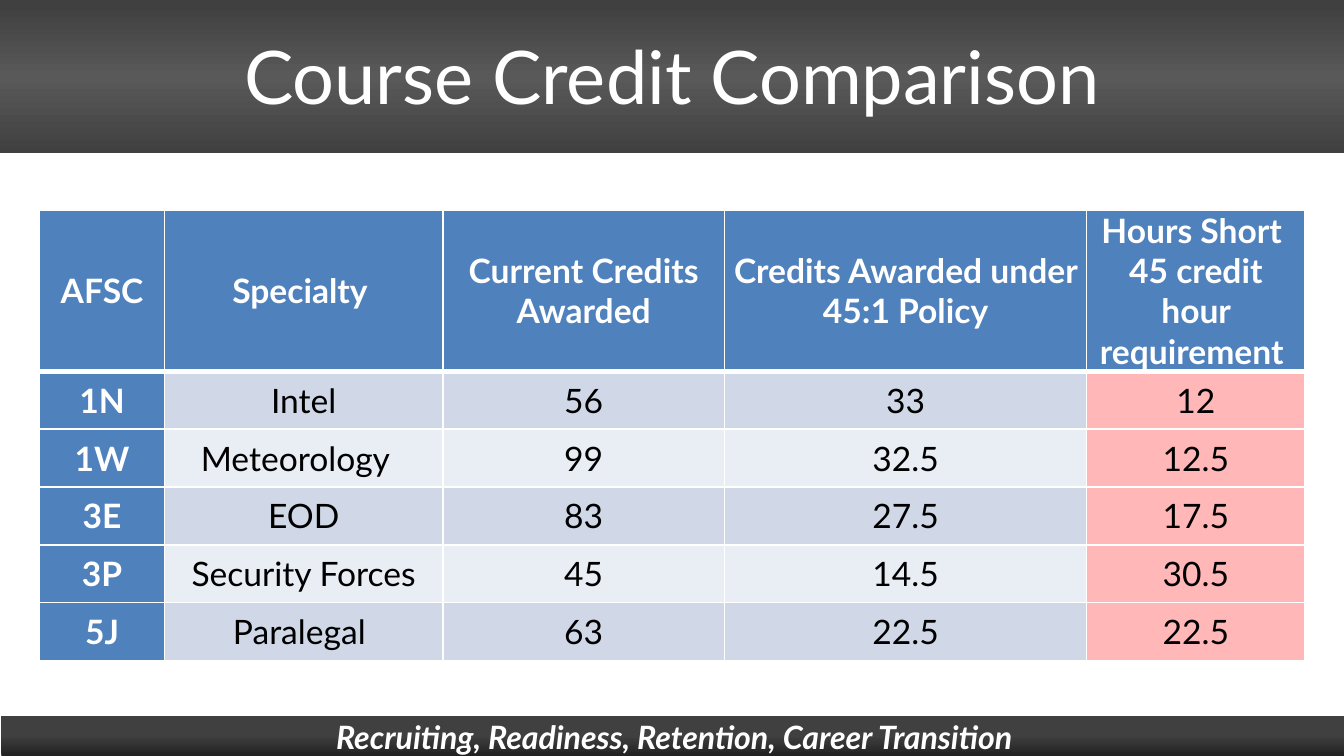
from copy import deepcopy
from pptx import Presentation
from pptx.dml.color import RGBColor
from pptx.enum.shapes import MSO_SHAPE as Shape
from pptx.enum.text import MSO_ANCHOR as Anchor, PP_ALIGN as Align
from pptx.oxml import parse_xml
from pptx.oxml.ns import nsdecls, qn
from pptx.util import Pt

COLORS = {
    "white": "FFFFFF",
    "black": "000000",
    "blue": "4F81BD",
    "band_dark": "D0D8E8",
    "band_light": "E9EDF4",
    "shortfall": "FFB7B7",
}


def add_bar(page, left, top, width, height, stops):
    bar = page.shapes.add_shape(Shape.RECTANGLE, Pt(left), Pt(top), Pt(width), Pt(height))
    bar.shadow.inherit = False
    bar.line.fill.background()
    bar.fill.gradient()
    bar.fill.gradient_angle = 90
    stop_list = bar._element.spPr.find(qn("a:gradFill")).find(qn("a:gsLst"))
    stop_list.append(deepcopy(stop_list[0]))
    for stop, (position, color) in zip(bar.fill.gradient_stops, stops):
        stop.position = position
        stop.color.rgb = RGBColor.from_string(color)
    return bar


def write_text(frame, text, size, color, bold=False, italic=False):
    para = frame.paragraphs[0]
    para.text = text
    para.alignment = Align.CENTER
    para.font.name = "Lato"
    para.font.size = Pt(size)
    para.font.bold = bold
    para.font.italic = italic
    para.font.color.rgb = RGBColor.from_string(COLORS[color])


deck = Presentation()
deck.slide_width, deck.slide_height = Pt(720), Pt(405)
page = deck.slides.add_slide(deck.slide_layouts[6])

add_bar(page, 0, 0, 720, 82, [(0, "404040"), (0.5, "595959"), (0.97, "404040")])
footer = add_bar(page, 0.7, 383.6, 720.7, 21.6,
                 [(0, "212121"), (0.52, "404040"), (0.92, "3D3D3D")])
frame = footer.text_frame
frame.word_wrap = True
frame.vertical_anchor = Anchor.MIDDLE
frame.margin_left = frame.margin_right = Pt(5)
frame.margin_top = frame.margin_bottom = Pt(3)
write_text(frame, "Recruiting, Readiness, Retention, Career Transition", 17.2, "white", True, True)

rows = [
    ["AFSC", "Specialty ", "Current Credits Awarded", "Credits Awarded under 45:1 Policy",
     "Hours Short \n45 credit hour requirement "],
    ["1N", "Intel", "56", "33", "12"],
    ["1W", "Meteorology  ", "99", "32.5", "12.5"],
    ["3E", "EOD", "83", "27.5", "17.5"],
    ["3P", "Security Forces", "45", "14.5", "30.5"],
    ["5J", "Paralegal ", "63", "22.5", "22.5"],
]
widths = [67, 149, 151, 194, 117]
heights = [62] + [31] * 5
table = page.shapes.add_table(len(rows), len(widths), Pt(21.2), Pt(112.5),
                              Pt(sum(widths)), Pt(sum(heights))).table
table.horz_banding = False
table.first_row = False
for column, width in zip(table.columns, widths):
    column.width = Pt(width)
for row, height in zip(table.rows, heights):
    row.height = Pt(height)

for i, values in enumerate(rows):
    for j, value in enumerate(values):
        cell = table.cell(i, j)
        cell.vertical_anchor = Anchor.MIDDLE
        cell.margin_left = cell.margin_right = Pt(5)
        cell.margin_top = cell.margin_bottom = 0
        for side in "LRTB":
            thick = (i, side) in [(0, "B"), (1, "T")]
            cell._tc.get_or_add_tcPr().append(parse_xml(
                f'<a:ln{side} {nsdecls("a")} w="{Pt(3 if thick else 1)}"><a:solidFill>'
                f'<a:srgbClr val="{COLORS["white"]}"/></a:solidFill></a:ln{side}>'))
        heading = i == 0 or j == 0
        if heading:
            fill = "blue"
        elif j == len(values) - 1:
            fill = "shortfall"
        else:
            fill = "band_dark" if i % 2 else "band_light"
        cell.fill.solid()
        cell.fill.fore_color.rgb = RGBColor.from_string(COLORS[fill])
        write_text(cell.text_frame, value, 18, "white" if heading else "black", heading)

title = page.shapes.add_textbox(Pt(120), Pt(12.5), Pt(480), Pt(55.5))
frame = title.text_frame
frame.word_wrap = True
frame.vertical_anchor = Anchor.MIDDLE
frame.margin_left = frame.margin_right = Pt(5)
write_text(frame, "Course Credit Comparison", 39.6, "white")

deck.save("out.pptx")
